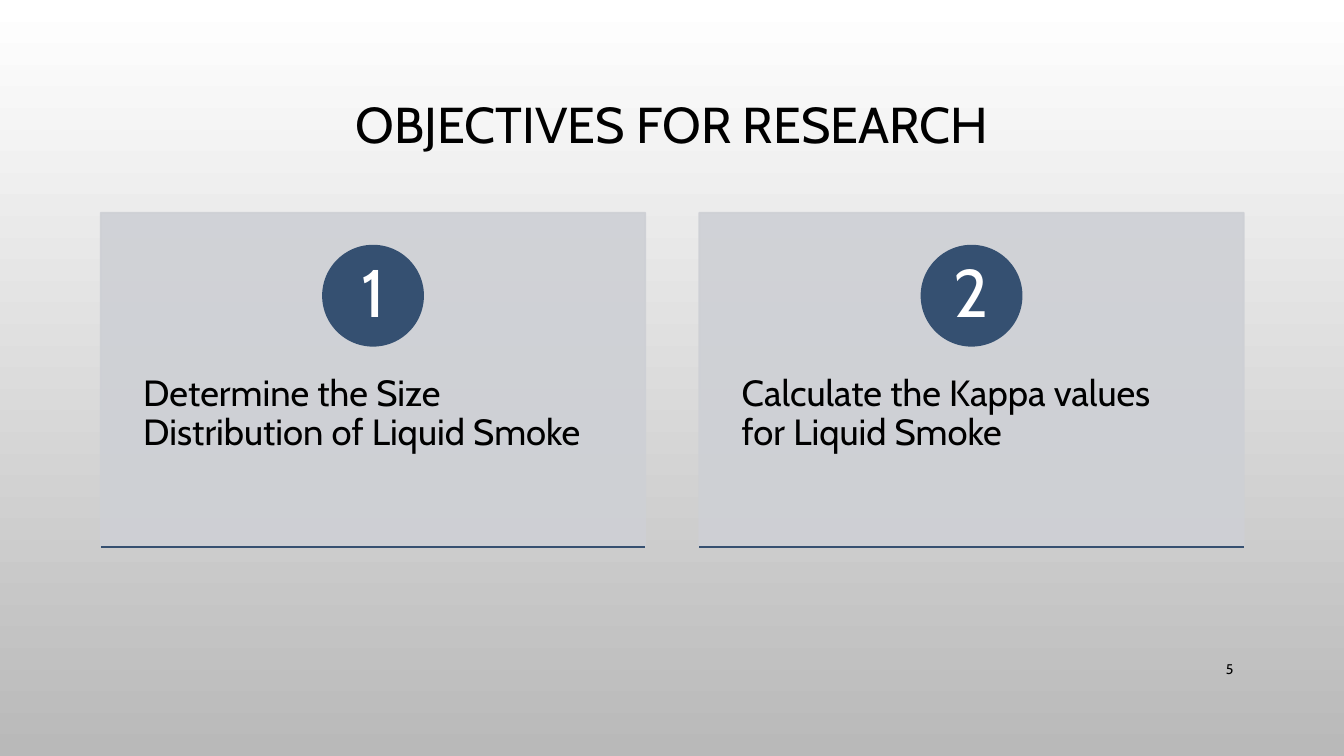
"""Build the slide with two numbered research objectives."""
from lxml import etree
from pptx import Presentation
from pptx.dml.color import RGBColor
from pptx.enum import shapes, text
from pptx.oxml.ns import qn
from pptx.util import Pt

BLACK = RGBColor(0x00, 0x00, 0x00)
WHITE = RGBColor(0xFF, 0xFF, 0xFF)
GREY = RGBColor(0xB9, 0xB9, 0xB9)
CARD = RGBColor(0xCE, 0xD0, 0xD5)
NAVY = RGBColor(0x35, 0x50, 0x71)
LEFT, CENTER, RIGHT = text.PP_ALIGN.LEFT, text.PP_ALIGN.CENTER, text.PP_ALIGN.RIGHT
TOP, MIDDLE = text.MSO_ANCHOR.TOP, text.MSO_ANCHOR.MIDDLE

prs = Presentation()
prs.slide_width, prs.slide_height = Pt(960), Pt(540)
s = prs.slides.add_slide(prs.slide_layouts[6])

bg = s.background.fill
bg.gradient()
bg.gradient_angle = 270
for stop, color in zip(bg.gradient_stops, (WHITE, GREY)):
    stop.color.rgb = color


def add_text(words, box, size, color=BLACK, align=LEFT, anchor=MIDDLE, inset=(7.2, 3.6), spacing=0.9):
    tf = s.shapes.add_textbox(*map(Pt, box)).text_frame
    dx, dy = map(Pt, inset)
    frame = {"word_wrap": True, "vertical_anchor": anchor, "margin_left": dx,
             "margin_right": dx, "margin_top": dy, "margin_bottom": dy}
    for name, value in frame.items():
        setattr(tf, name, value)
    p = tf.paragraphs[0]
    p.alignment, p.line_spacing = align, spacing
    r = p.add_run()
    r.text = words
    for name, value in {"name": "Cabin", "size": Pt(size)}.items():
        setattr(r.font, name, value)
    r.font.color.rgb = color


def add_filled(kind, box, color, opacity=100):
    sp = s.shapes.add_shape(kind, *map(Pt, box))
    sp.shadow.inherit = False
    sp.line.width = Pt(1.25)
    for fill in (sp.fill, sp.line.fill):
        fill.solid()
        fill.fore_color.rgb = color
    if opacity < 100:
        for clr in sp._element.spPr.iter(qn("a:srgbClr")):
            etree.SubElement(clr, qn("a:alpha"), val=str(opacity * 1000))


add_text("OBJECTIVES FOR RESEARCH", (72, 28, 816, 126), 36, align=CENTER)

card_w, card_h, card_top, pitch = 389, 238.5, 152, 427.5
disc, digit = 71.5, 50.5
disc_top = 175.5
objectives = ("Determine the Size Distribution of Liquid Smoke",
              "Calculate the Kappa values for Liquid Smoke")

for i, objective in enumerate(objectives):
    x = 72 + i * pitch
    mid, bottom = x + card_w / 2, card_top + card_h
    add_filled(shapes.MSO_SHAPE.RECTANGLE, (x, card_top, card_w, card_h), CARD, 90)
    add_text(objective, (x, 242, card_w, 143), 26, anchor=TOP, inset=(30.3, 26))
    add_filled(shapes.MSO_SHAPE.OVAL, (mid - disc / 2, disc_top, disc, disc), NAVY)
    add_text(str(i + 1), (mid - digit / 2, disc_top + (disc - digit) / 2, digit, digit),
             48, WHITE, CENTER, inset=(5.6, 0.9))
    rule = s.shapes.add_connector(shapes.MSO_CONNECTOR.STRAIGHT,
                                  *map(Pt, (x, bottom, x + card_w, bottom)))
    rule.line.width = Pt(1.25)
    rule.line.color.rgb = NAVY
    etree.SubElement(rule._element.spPr, qn("a:effectLst"))

add_text("5", (828, 463, 60, 29), 10, align=RIGHT, spacing=1.0)

prs.save("out.pptx")
